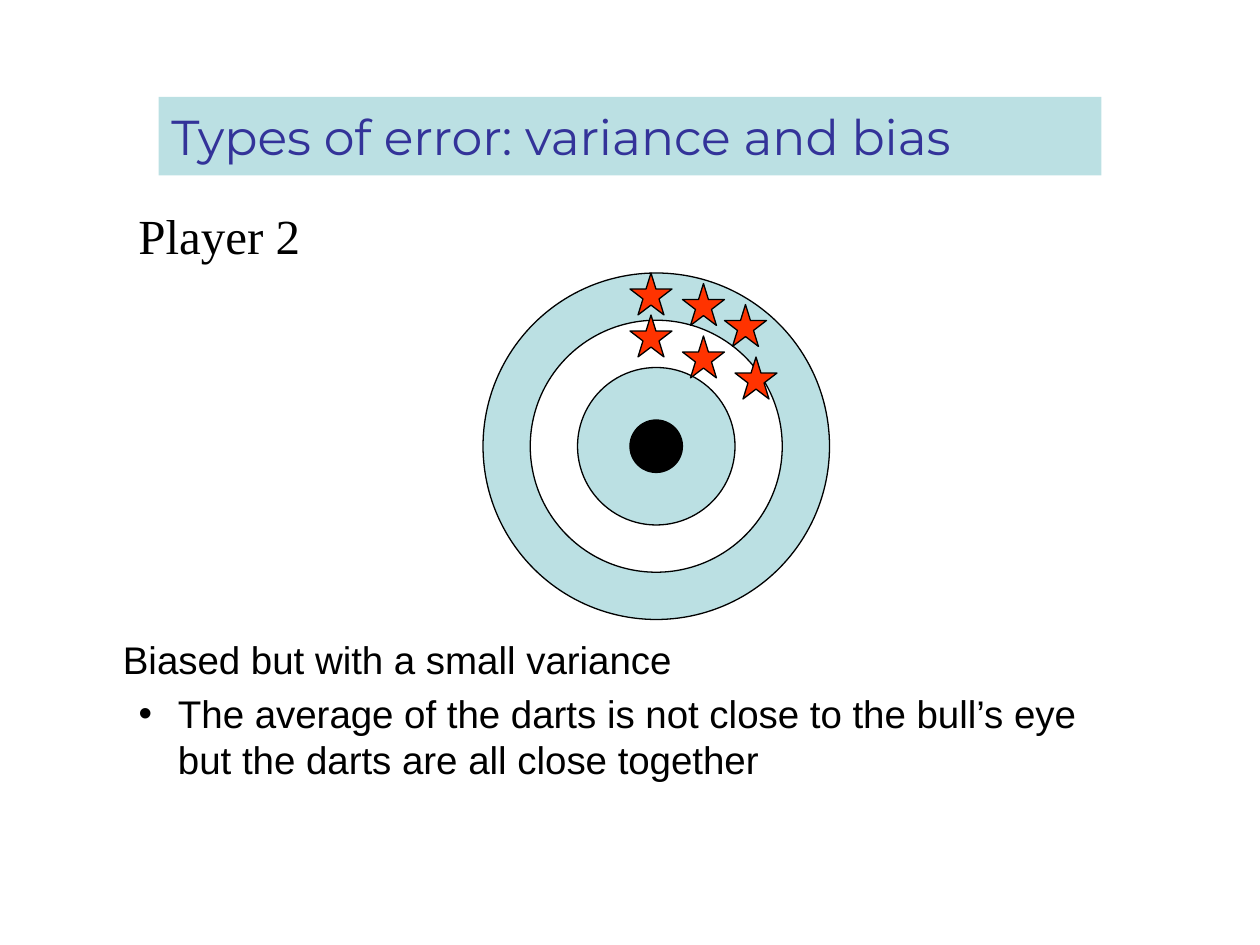
"""Builds a slide on variance and bias with a dartboard."""
from lxml import etree
from pptx import Presentation
from pptx.dml.color import RGBColor
from pptx.enum import shapes, text
from pptx.oxml import ns
from pptx.util import Pt

TITLE = "Types of error: variance and bias"
LABEL = "Player 2"
NOTES = [
    {"words": "Biased but with a small variance", "left": 27, "hang": 0, "mark": None},
    {"words": "The average of the darts is not close to the bull’s eye "
              "but the darts are all close together",
     "left": 58.5, "hang": -22.5, "mark": "•", "level": 1},
]
CENTER = (375, 255)
RINGS = [("DONUT", 198, "pale"), ("OVAL", 90, "pale"), ("OVAL", 30, "ink")]
BAND = 27
DARTS = [(390, 162), (420, 204), (414, 174), (360, 180), (390, 192), (360, 156)]
DART = 24
THEME = {
    "pale": "BBE0E3", "ink": "000000", "dart": "FF3300", "title": "333399",
    "head": 28, "body": 22, "line": 0.75,
    "sans": "Arial", "serif": "Times New Roman", "show": "Montserrat",
}


def tint(name):
    return RGBColor.from_string(THEME[name])


def place(shape, left, top, width, height):
    shape.left, shape.top = Pt(left), Pt(top)
    shape.width, shape.height = Pt(width), Pt(height)


def write(para, words, font="sans", size="body", color="ink", left=0, hang=0,
          mark=None, level=0, gap=0):
    para.level = level
    para.alignment = text.PP_ALIGN.LEFT
    para.space_before = Pt(gap)
    props = para._p.get_or_add_pPr()
    props.set("marL", str(Pt(left)))
    props.set("indent", str(Pt(hang)))
    if mark:
        etree.SubElement(props, ns.qn("a:buChar")).set("char", mark)
    else:
        etree.SubElement(props, ns.qn("a:buNone"))
    run = para.add_run()
    run.text = words
    run.font.name = THEME[font]
    run.font.size = Pt(THEME[size])
    run.font.color.rgb = tint(color)


def draw(slide, kind, left, top, size, color):
    form = getattr(shapes.MSO_SHAPE, kind)
    shape = slide.shapes.add_shape(form, Pt(left), Pt(top), Pt(size), Pt(size))
    shape.shadow.inherit = False
    shape.fill.solid()
    shape.fill.fore_color.rgb = tint(color)
    shape.line.color.rgb = tint("ink")
    shape.line.width = Pt(THEME["line"])
    return shape


def frame(shape, anchor):
    box = shape.text_frame
    box.word_wrap = True
    box.auto_size = text.MSO_AUTO_SIZE.NONE
    box.vertical_anchor = anchor
    return box


def main():
    deck = Presentation()
    deck.slide_width, deck.slide_height = Pt(720), Pt(540)
    slide = deck.slides.add_slide(deck.slide_layouts[1])
    title, body = slide.placeholders

    for kind, size, color in RINGS:
        left, top = (mid - size / 2 for mid in CENTER)
        ring = draw(slide, kind, left, top, size, color)
        if kind == "DONUT":
            ring.adjustments[0] = BAND / size
    for left, top in DARTS:
        draw(slide, "STAR_5_POINT", left, top, DART, "dart")

    place(title, 90.7, 55.4, 538.6, 44.9)
    title.fill.solid()
    title.fill.fore_color.rgb = tint("pale")
    box = frame(title, text.MSO_ANCHOR.MIDDLE)
    write(box.paragraphs[0], TITLE, font="show", size="head", color="title")

    place(body, 36, 360, 612, 132)
    box = frame(body, text.MSO_ANCHOR.TOP)
    for i, note in enumerate(NOTES):
        para = box.add_paragraph() if i else box.paragraphs[0]
        write(para, gap=THEME["body"] / 5, **note)

    label = slide.shapes.add_textbox(Pt(72), Pt(114), Pt(258), Pt(41))
    box = frame(label, text.MSO_ANCHOR.TOP)
    write(box.paragraphs[0], LABEL, font="serif", size="head")
    deck.save("out.pptx")


if __name__ == "__main__":
    main()
